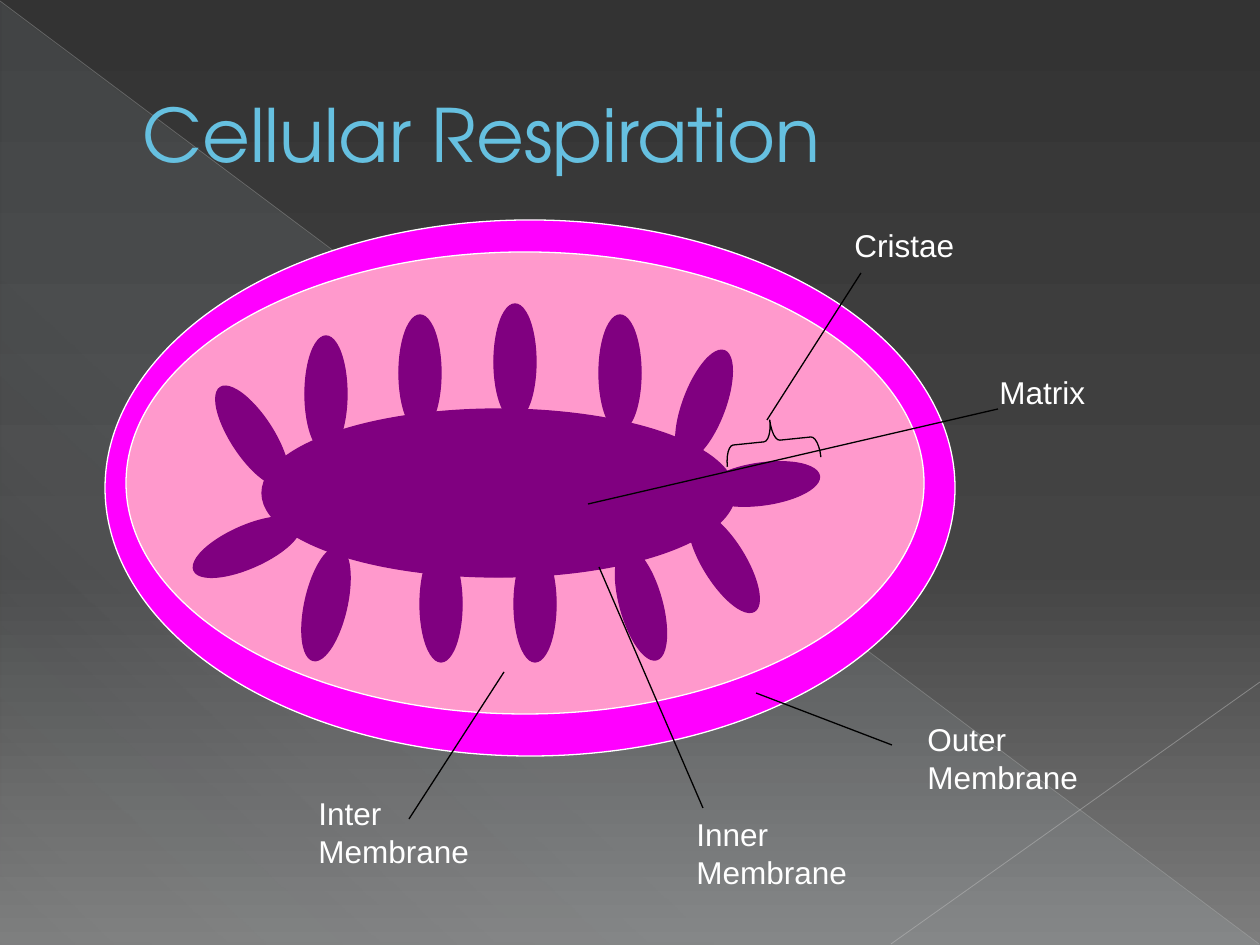
from lxml import etree
from pptx import Presentation
from pptx.dml.color import RGBColor
from pptx.enum.shapes import MSO_CONNECTOR, MSO_SHAPE
from pptx.enum.text import MSO_ANCHOR, PP_ALIGN
from pptx.oxml.ns import qn
from pptx.util import Emu, Pt

OVAL, BRACE = MSO_SHAPE.OVAL, MSO_SHAPE.LEFT_BRACE
WEDGE = MSO_SHAPE.RIGHT_TRIANGLE
LINE, MIDDLE, LEFT = MSO_CONNECTOR.STRAIGHT, MSO_ANCHOR.MIDDLE, PP_ALIGN.LEFT
SCALE = 914400 / 126
WHITE, BLACK, PURPLE = "FFFFFF", "000000", "800080"

TITLE = "Cellular Respiration"
# position %, colour, opacity %
BACK = [(0, "333333", 100), (60, "444444", 100), (100, "7D7D7D", 100)]
SHEEN = [(0, "DEF5FA", 10), (70, "DEF5FA", 8), (100, "DEF5FA", 1)]
# ends, colour, width, opacity %
RAYS = [((0, 1, 1259, 944), "B9B9B9", 0.39, 35),
        ((1260, 682, 891, 944), "C1C1C1", 0.47, 45)]
MEMBRANES = [((105, 220, 850, 536), "FF00FF"), ((126, 252, 798, 462), "FF99CC")]
CORE = (262, 409, 473, 168)
FOLD = (42, 116)
# left, top, turn
FOLDS = [(420, 546, 0), (305, 546, 12.7), (226, 489, 246.1), (231, 378, 326.8),
         (305, 336, 0), (683, 347, 20.6), (599, 315, 0), (399, 315, 0),
         (494, 304, 0), (741, 426, 82.1), (703, 504, 328.3),
         (620, 546, 344.4), (514, 546, 0)]
BRACKET = (751, 394, 42, 94)
# text, box, pointer ends
CRISTAE = ("Cristae", (842, 220, 147, 50), (767, 420, 861, 273))
LABELS = [("Matrix", (987, 367, 126, 50), (588, 504, 998, 409)),
          ("Outer Membrane", (915, 714, 199, 88), (892, 745, 756, 693)),
          ("Inner Membrane", (684, 809, 220, 88), (703, 808, 599, 567)),
          ("Inter Membrane", (306, 788, 210, 88), (409, 819, 504, 672))]


def px(*sizes):
    return [Emu(round(n * SCALE)) for n in sizes]


def rgb(code):
    return RGBColor.from_string(code)


def fade(node, part):
    """Give the colours under node an opacity in percent."""
    for color in node.iter(qn("a:srgbClr")):
        etree.SubElement(color, qn("a:alpha")).set("val", str(part * 1000))


def blend(fill, node, stops, angle):
    """Fill with a linear gradient; node holds the fill's XML."""
    fill.gradient()
    grad = next(node.iter(qn("a:gradFill")))
    items = grad.find(qn("a:gsLst"))
    for old in list(items):
        items.remove(old)
    for pos, code, part in stops:
        stop = etree.SubElement(items, qn("a:gs"), pos=str(pos * 1000))
        etree.SubElement(stop, qn("a:srgbClr"), val=code)
        if part < 100:
            fade(stop, part)
    grad.find(qn("a:lin")).set("ang", str(angle * 60000))


def shape(parent, kind, box, fill=None, line=None, turn=0):
    item = parent.add_shape(kind, *px(*box))
    item.shadow.inherit = False
    item.rotation = turn
    if fill:
        item.fill.solid()
        item.fill.fore_color.rgb = rgb(fill)
    else:
        item.fill.background()
    if line:
        item.line.color.rgb = rgb(line)
        item.line.width = Pt(0.75)
    else:
        item.line.fill.background()
    return item


def rule(parent, ends, color=BLACK, width=0.75, part=100):
    item = parent.add_connector(LINE, *px(*ends))
    item.line.color.rgb = rgb(color)
    item.line.width = Pt(width)
    props = item.element.spPr
    if part < 100:
        fade(props, part)
    etree.SubElement(props, qn("a:effectLst"))


def write(frame, text, font="Arial", size=18, color=WHITE):
    frame.word_wrap = True
    para = frame.paragraphs[0]
    para.alignment = LEFT
    run = para.add_run()
    run.text = text
    run.font.name, run.font.size = font, Pt(size)
    run.font.color.rgb = rgb(color)
    return para, run


def label(parent, text, box, ends):
    rule(parent, ends)
    write(parent.add_textbox(*px(*box)).text_frame, text)


def head(slide):
    title = slide.shapes.title
    title.left, title.top, title.width, title.height = px(63, 37, 1134, 193)
    title.text_frame.vertical_anchor = MIDDLE
    para, run = write(title.text_frame, TITLE, "TeX Gyre Adventor", 42, "66C0E0")
    props = para._p.get_or_add_pPr()
    props.set("marL", str(px(67)[0]))
    props.set("indent", "0")
    edge = etree.Element(qn("a:ln"), w=str(Pt(0.5)))
    paint = etree.SubElement(edge, qn("a:solidFill"))
    etree.SubElement(paint, qn("a:srgbClr"), val="1F7084")
    run.font._element.insert(0, edge)
    slide.shapes._spTree.append(title.element)


def main():
    deck = Presentation()
    deck.slide_width, deck.slide_height = px(1260, 945)
    slide = deck.slides.add_slide(deck.slide_layouts[5])
    shapes = slide.shapes
    blend(slide.background.fill, slide.element, BACK, 90)
    wedge = shape(shapes, WEDGE, (1, 2, 1259, 943))
    blend(wedge.fill, wedge.element, SHEEN, 133)
    for ray in RAYS:
        rule(shapes, *ray)
    head(slide)

    cell = shapes.add_group_shape().shapes
    for box, color in MEMBRANES:
        shape(cell, OVAL, box, color, WHITE)
    for left, top, turn in FOLDS:
        shape(cell, OVAL, (left, top, *FOLD), PURPLE, PURPLE, turn)
    shape(cell, OVAL, CORE, PURPLE, PURPLE)
    brace = shape(cell, BRACE, BRACKET, line=BLACK, turn=84.1)
    brace.adjustments[0] = 0.19
    label(cell, *CRISTAE)
    for item in LABELS:
        label(shapes, *item)
    deck.save("out.pptx")


if __name__ == "__main__":
    main()
